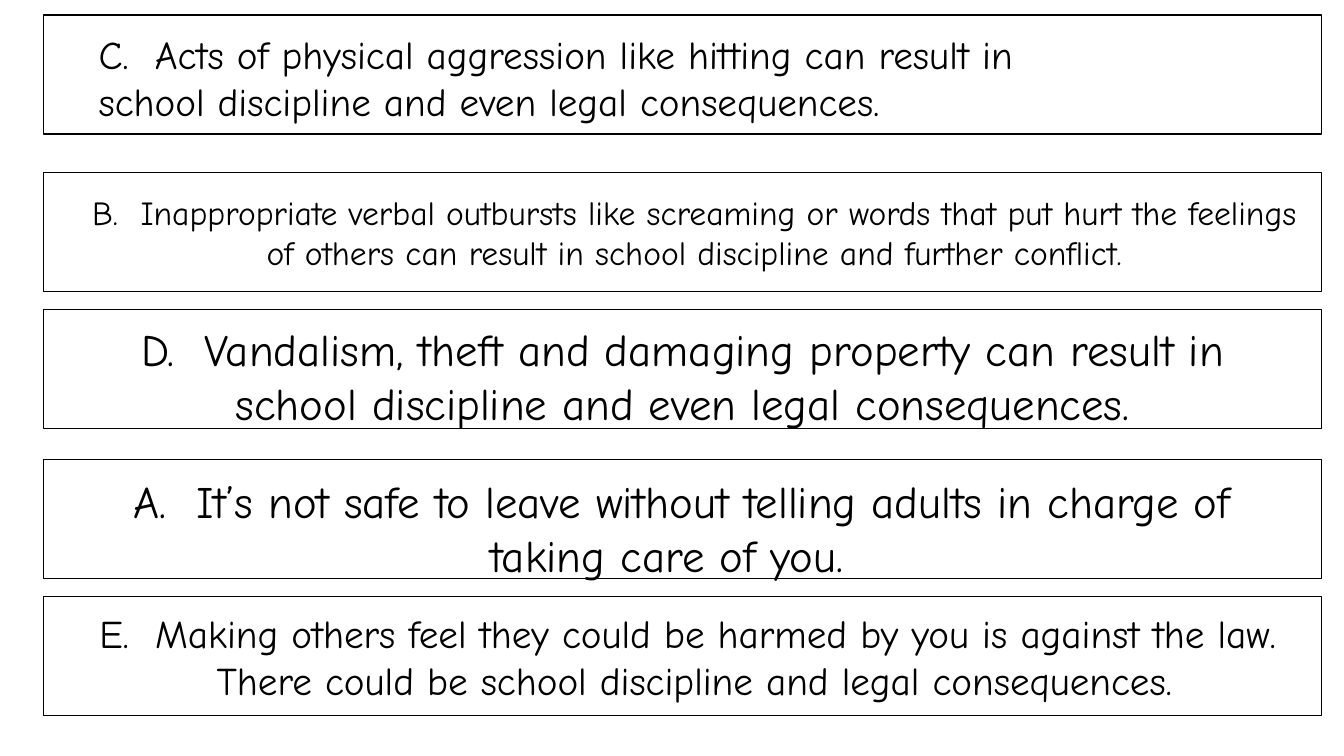
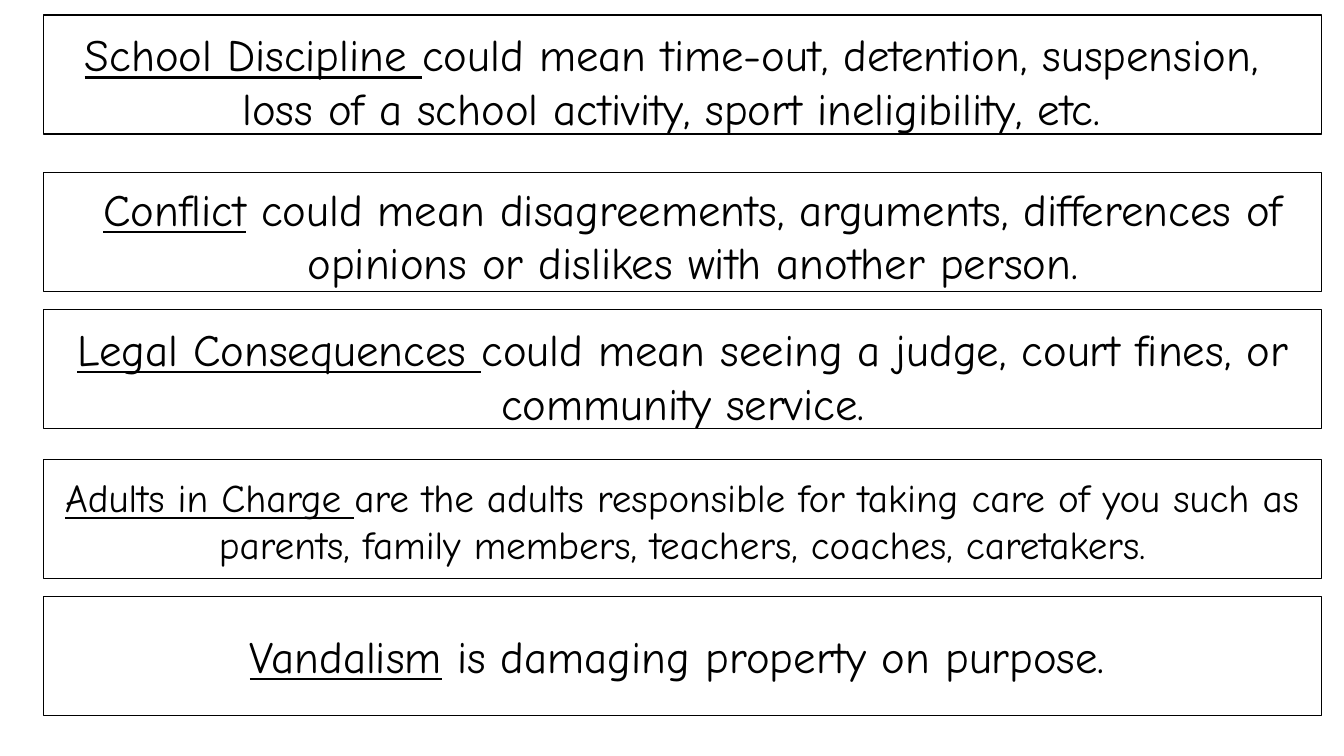
from dataclasses import dataclass

from pptx import Presentation
from pptx.dml.color import RGBColor
from pptx.enum.shapes import MSO_SHAPE
from pptx.enum.text import MSO_AUTO_SIZE, PP_ALIGN
from pptx.util import Pt

RECTANGLE = MSO_SHAPE.RECTANGLE
FIT_SHAPE = MSO_AUTO_SIZE.SHAPE_TO_FIT_TEXT
LEFT, CENTER = PP_ALIGN.LEFT, PP_ALIGN.CENTER
PX = 9144


@dataclass(frozen=True)
class Theme:
    ink: RGBColor = RGBColor(0, 0, 0)
    paper: RGBColor = RGBColor(255, 255, 255)
    font: str = "Comic Neue"
    small: int = 24
    medium: int = 28
    large: int = 32
    border: int = 1


theme = Theme()

BAND_LEFT, BAND_WIDTH, BAND_HEIGHT = 43, 1268, 118
BAND_TOPS = (15, 171, 307, 456, 592)

consequences = [
    ((88, 25, 1052, 104), theme.medium, LEFT, "",
     "C.  Acts of physical aggression like hitting can result in\v"
     "school discipline and even legal consequences."),
    ((66, 185, 1245, 91), theme.small, CENTER, "",
     "B.  Inappropriate verbal outbursts like screaming or words that put hurt "
     "the feelings of others can result in school discipline and further conflict."),
    ((65, 314, 1225, 118), theme.large, CENTER, "",
     "D.  Vandalism, theft and damaging property can result in "
     "school discipline and even legal consequences."),
    ((77, 465, 1199, 118), theme.large, CENTER, "",
     "A.  It’s not safe to leave without telling adults in charge of "
     "taking care of you.  "),
    ((65, 600, 1247, 104), theme.medium, CENTER, "",
     "E.  Making others feel they could be harmed by you is against the law.  "
     "There could be school discipline and legal consequences."),
]

definitions = [
    ((43, 22, 1247, 118), theme.large, CENTER, "School Discipline ",
     "could mean time-out, detention, suspension, "
     "loss of a school activity, sport ineligibility, etc."),
    ((65, 175, 1245, 118), theme.large, CENTER, "Conflict",
     " could mean disagreements, arguments, differences of "
     "opinions or dislikes with another person."),
    ((65, 314, 1225, 118), theme.large, CENTER, "Legal Consequences ",
     "could mean seeing a judge, court fines, or community service."),
    ((43, 465, 1267, 104), theme.medium, CENTER, "Adults in Charge ",
     "are the adults responsible for taking care of you such as "
     "parents, family members, teachers, coaches, caretakers."),
    ((181, 619, 1012, 64), theme.large, CENTER, "Vandalism",
     " is damaging property on purpose.  "),
]

deck = Presentation()
deck.slide_width, deck.slide_height = 1333 * PX, 750 * PX
blank = deck.slide_layouts[6]

for statements in (consequences, definitions):
    slide = deck.slides.add_slide(blank)

    for top in BAND_TOPS:
        band = slide.shapes.add_shape(
            RECTANGLE, BAND_LEFT * PX, top * PX, BAND_WIDTH * PX, BAND_HEIGHT * PX)
        band.shadow.inherit = False
        band.fill.solid()
        band.fill.fore_color.rgb = theme.paper
        band.line.color.rgb = theme.ink
        band.line.width = Pt(theme.border)

    for bounds, size, alignment, term, wording in statements:
        statement = slide.shapes.add_textbox(*(length * PX for length in bounds))
        frame = statement.text_frame
        frame.word_wrap = True
        frame.auto_size = FIT_SHAPE
        paragraph = frame.paragraphs[0]
        paragraph.alignment = alignment
        paragraph.text = term or wording
        if term:
            paragraph.runs[0].font.underline = True
            paragraph.add_run().text = wording
        for run in paragraph.runs:
            run.font.name = theme.font
            run.font.size = Pt(size)
            run.font.color.rgb = theme.ink

deck.save("out.pptx")
